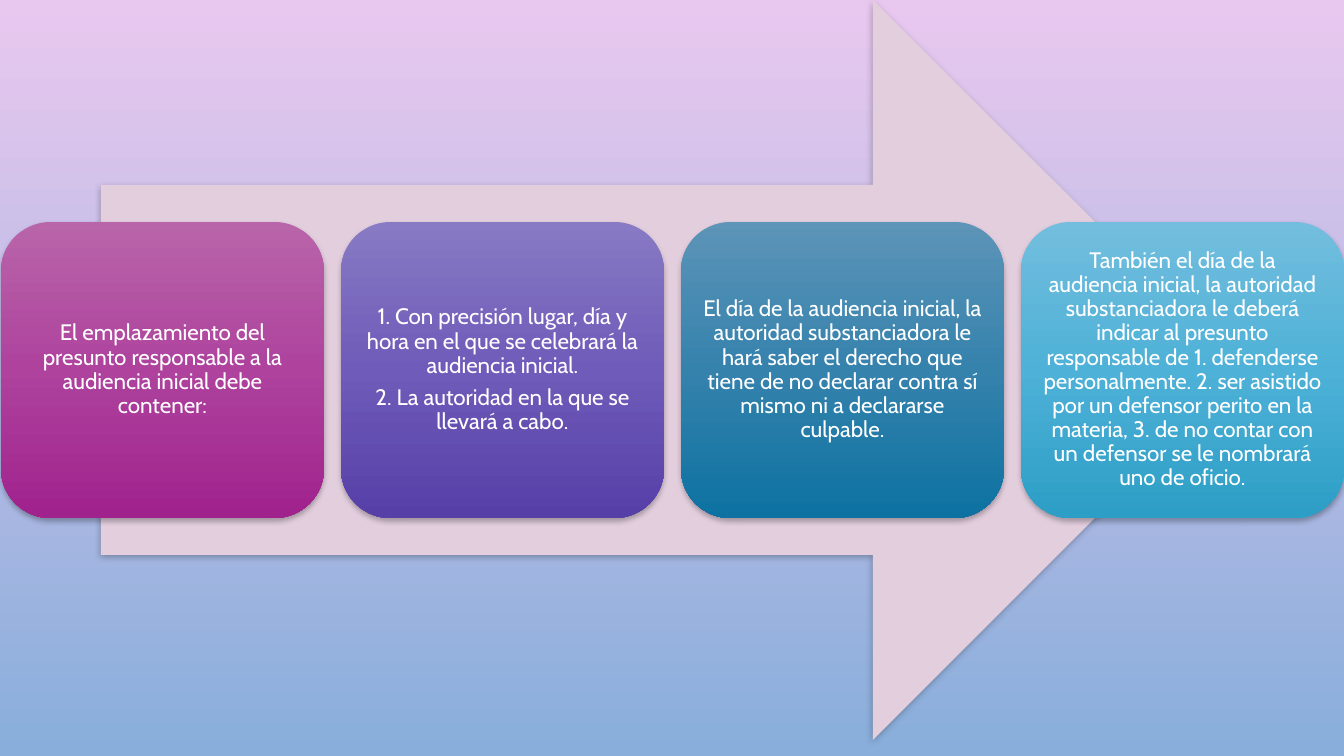
from copy import deepcopy

from pptx import Presentation
from pptx.dml.color import RGBColor
from pptx.enum.shapes import MSO_SHAPE as Shape
from pptx.enum.text import MSO_ANCHOR as Anchor, PP_ALIGN as Align
from pptx.oxml import parse_xml
from pptx.oxml.ns import nsdecls, qn
from pptx.util import Pt

COLORS = {
    "sky": ["E9C8EF", "89AEDB"],
    "arrow": "E3CEDE",
    "magenta": ["B965AA", "AE429D", "A0228D"],
    "violet": ["887AC4", "6F5BB9", "563FA7"],
    "blue": ["5D94B8", "3582AD", "0D72A1"],
    "cyan": ["73BEDE", "4EB1D7", "2D9EC6"],
    "text": "FFFFFF",
    "shadow": "000000",
}

CARDS = [
    ("magenta", ["El emplazamiento del presunto responsable a la audiencia inicial debe contener:"]),
    ("violet", [
        "1. Con precisión lugar, día y hora en el que se celebrará la audiencia inicial.",
        "2. La autoridad en la que se llevará a cabo.",
    ]),
    ("blue", [
        "El día de la audiencia inicial, la autoridad substanciadora le hará saber el derecho "
        "que tiene de no declarar contra sí mismo ni a declararse culpable."
    ]),
    ("cyan", [
        "También el día de la audiencia inicial, la autoridad substanciadora le deberá indicar "
        "al presunto responsable de 1. defenderse personalmente. 2. ser asistido por un defensor "
        "perito en la materia, 3. de no contar con un defensor se le nombrará uno de oficio."
    ]),
]


def px(length):
    return round(length * 12192000 / 1344)


class SlideBuilder:
    font_name = "Cabin"
    font_size = Pt(16)
    inset = px(7)

    def __init__(self, slide):
        self.slide = slide

    def gradient(self, fill, colors):
        fill.gradient_angle = 270
        last = len(colors) - 1
        for index, (stop, color) in enumerate(zip(fill.gradient_stops, colors)):
            stop.position = index / last
            stop.color.rgb = RGBColor.from_string(color)

    def background(self, color):
        fill = self.slide.background.fill
        fill.gradient()
        self.gradient(fill, COLORS[color])

    def shape(self, kind, left, top, width, height):
        shape = self.slide.shapes.add_shape(kind, px(left), px(top), px(width), px(height))
        shape.line.fill.background()
        shape._element.spPr.append(parse_xml(
            f'<a:effectLst {nsdecls("a")}>'
            f'<a:outerShdw blurRad="{Pt(4)}" dist="{Pt(2)}" dir="5400000" rotWithShape="0">'
            f'<a:srgbClr val="{COLORS["shadow"]}"><a:alpha val="28000"/></a:srgbClr>'
            '</a:outerShdw></a:effectLst>'
        ))
        return shape

    def arrow(self, left, top, width, height):
        shape = self.shape(Shape.RIGHT_ARROW, left, top, width, height)
        shape.fill.solid()
        shape.fill.fore_color.rgb = RGBColor.from_string(COLORS["arrow"])

    def card(self, left, top, width, height, color, texts):
        shape = self.shape(Shape.ROUNDED_RECTANGLE, left, top, width, height)
        shape.fill.gradient()
        stops = shape._element.spPr.find(".//" + qn("a:gsLst"))
        stops.insert(1, deepcopy(stops[0]))
        self.gradient(shape.fill, COLORS[color])

        frame = shape.text_frame
        frame.word_wrap = True
        frame.vertical_anchor = Anchor.MIDDLE
        frame.margin_left = frame.margin_right = self.inset
        frame.margin_top = frame.margin_bottom = self.inset
        frame.text = "\n".join(texts)
        for paragraph in frame.paragraphs:
            paragraph.alignment = Align.CENTER
            paragraph.line_spacing = 0.9
            paragraph.space_after = Pt(5.6)
            paragraph.font.name = self.font_name
            paragraph.font.size = self.font_size
            paragraph.font.color.rgb = RGBColor.from_string(COLORS["text"])


def main():
    presentation = Presentation()
    presentation.slide_width = px(1344)
    presentation.slide_height = px(756)
    builder = SlideBuilder(presentation.slides.add_slide(presentation.slide_layouts[6]))
    builder.background("sky")
    builder.arrow(101, 0, 1142, 740)
    for index, (color, texts) in enumerate(CARDS):
        builder.card(1 + 340 * index, 222, 323, 296, color, texts)
    presentation.save("out.pptx")


if __name__ == "__main__":
    main()
